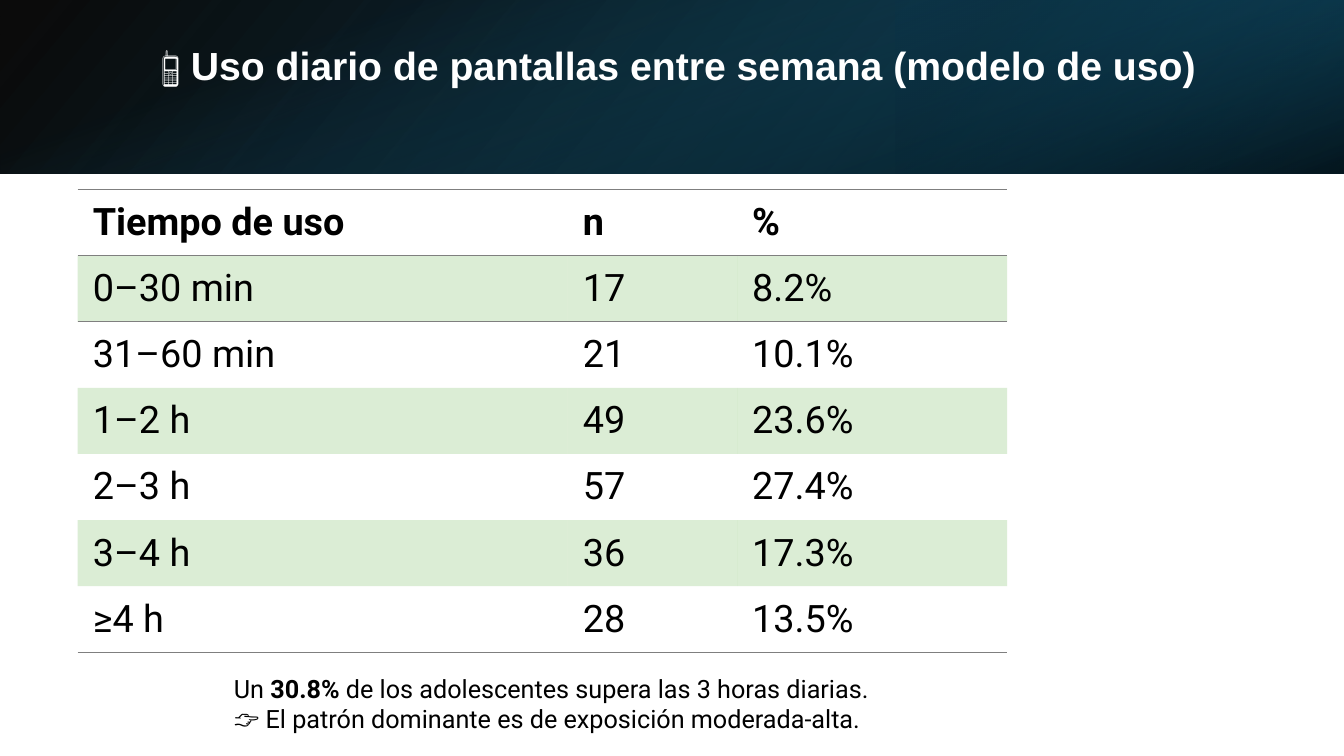
from dataclasses import dataclass

from lxml import etree
from pptx import Presentation
from pptx import util as u
from pptx.dml.color import RGBColor
from pptx.enum import shapes, text
from pptx.oxml import ns

Pt = u.Pt


@dataclass(frozen=True)
class Theme:
    white: str = "FFFFFF"
    black: str = "000000"
    navy: str = "0B3041"
    teal: str = "156082"
    deep: str = "104862"
    green: str = "4EA72E"
    rule: str = "7F7F7F"
    tint: int = 20
    head: str = "Arial"
    body: str = "Roboto"
    title: float = 28
    cell: float = 27
    note: float = 18


THEME = Theme()
PLAIN = "{2D5ABB26-0587-4C30-8999-92F81FD0307C}"
ROWS = [
    ("Tiempo de uso", "n", "%"),
    ("0–30 min", "17", "8.2%"),
    ("31–60 min", "21", "10.1%"),
    ("1–2 h", "49", "23.6%"),
    ("2–3 h", "57", "27.4%"),
    ("3–4 h", "36", "17.3%"),
    ("≥4 h", "28", "13.5%"),
]
COLS = (350, 121, 193)


def put(item, form):
    for name, value in form.items():
        setattr(item, name, value)


def add(root, tag, **attrs):
    return etree.SubElement(root, ns.qn(tag), attrs)


def tone(root, color, alpha):
    node = add(root, "a:srgbClr", val=color)
    add(node, "a:alpha", val=str(alpha * 1000))


def write(para, words, face, size, color, bold=False):
    run = para.add_run()
    run.text = words
    put(run.font, {"name": face, "size": Pt(size), "bold": bold})
    run.font.color.rgb = RGBColor.from_string(color)


def label(slide, box, form):
    frame = slide.shapes.add_textbox(*map(Pt, box)).text_frame
    put(frame, {"word_wrap": True, **form})
    return frame


def wash(slide, box, stops, angle, turn=0, flip=False):
    """Lay a see-through gradient over the box."""
    x, y, w, h = box
    if turn == 90:
        x, y, w, h = x + (w - h) / 2, y + (h - w) / 2, h, w
    rect = slide.shapes.add_shape(shapes.MSO_SHAPE.RECTANGLE, *map(Pt, (x, y, w, h)))
    rect.shadow.inherit = False
    rect.rotation = turn
    rect.line.fill.background()
    rect.fill.background()
    props = rect._element.spPr
    if flip:
        props.find(ns.qn("a:xfrm")).set("flipH", "1")
    grad = etree.Element(ns.qn("a:gradFill"), rotWithShape="1")
    group = add(grad, "a:gsLst")
    for pos, color, alpha in stops:
        tone(add(group, "a:gs", pos=str(pos * 1000)), color, alpha)
    add(grad, "a:lin", ang=str(angle * 60000), scaled="0")
    props.replace(props.find(ns.qn("a:noFill")), grad)


def banner(slide, box):
    x, y, w, h = box
    t = THEME
    # Layered gradients
    wash(slide, box, [(0, t.black, 96), (100, t.deep, 100)], 140, flip=True)
    wash(slide, (x + w * 2 / 3, y, w / 3, h),
         [(19, t.navy, 68), (100, t.teal, 79)], 320, 180, True)
    wash(slide, box, [(23, t.teal, 0), (99, t.black, 74)], 340, 90)
    # Title
    frame = label(slide, (x + 108, y + 27.5, w - 169, 69), {"margin_top": Pt(5.5)})
    para = frame.paragraphs[0]
    para.line_spacing = 0.9
    write(para, "📱 Uso diario de pantallas entre semana (modelo de uso)",
          t.head, t.title, t.white, True)


def edge(cell, side):
    line = etree.Element(ns.qn("a:" + side), w=str(Pt(1)))
    add(add(line, "a:solidFill"), "a:srgbClr", val=THEME.rule)
    cell._tc.get_or_add_tcPr().insert(0, line)


def usage(slide, box):
    t = THEME
    grid = slide.shapes.add_table(len(ROWS), len(COLS), *map(Pt, box)).table
    put(grid, {"first_row": True, "horz_banding": False})
    grid._tbl.tblPr.find(ns.qn("a:tableStyleId")).text = PLAIN
    for col, width in zip(grid.columns, COLS):
        col.width = Pt(width)
    for row in grid.rows:
        row.height = Pt(box[3] / len(ROWS))
    form = {"margin_left": Pt(10.8), "margin_right": Pt(10.8),
            "margin_top": Pt(5.4), "margin_bottom": Pt(5.4),
            "vertical_anchor": text.MSO_ANCHOR.MIDDLE}
    for r, row in enumerate(ROWS):
        for c, words in enumerate(row):
            cell = grid.cell(r, c)
            put(cell, form)
            write(cell.text_frame.paragraphs[0], words, t.body, t.cell, t.black, r == 0)
            # Tinted odd rows
            cell.fill.background()
            if r % 2:
                cell.fill.solid()
                cell.fill.fore_color.rgb = RGBColor.from_string(t.green)
                shade = cell._tc.tcPr.find(".//" + ns.qn("a:srgbClr"))
                add(shade, "a:alpha", val=str(t.tint * 1000))
            # Rules around the header and below the last row
            if r in (0, len(ROWS) - 1):
                edge(cell, "lnB")
            if r == 0:
                edge(cell, "lnT")
            if r == 1:
                edge(cell, "lnT")


def note(slide, box):
    t = THEME
    frame = label(slide, box, {"auto_size": text.MSO_AUTO_SIZE.SHAPE_TO_FIT_TEXT})
    first = frame.paragraphs[0]
    for words, bold in (("Un ", False), ("30.8%", True),
                        (" de los adolescentes supera las 3 horas diarias.", False)):
        write(first, words, t.body, t.note, t.black, bold)
    write(frame.add_paragraph(), "👉 El patrón dominante es de exposición moderada-alta.",
          t.body, t.note, t.black)


def main():
    deck = Presentation()
    put(deck, {"slide_width": Pt(960), "slide_height": Pt(540)})
    slide = deck.slides.add_slide(deck.slide_layouts[6])
    banner(slide, (0, 0, 960, 124))
    usage(slide, (55.5, 135.5, sum(COLS), 330.4))
    note(slide, (160, 477.5, 480, 51))
    deck.save("out.pptx")


if __name__ == "__main__":
    main()
